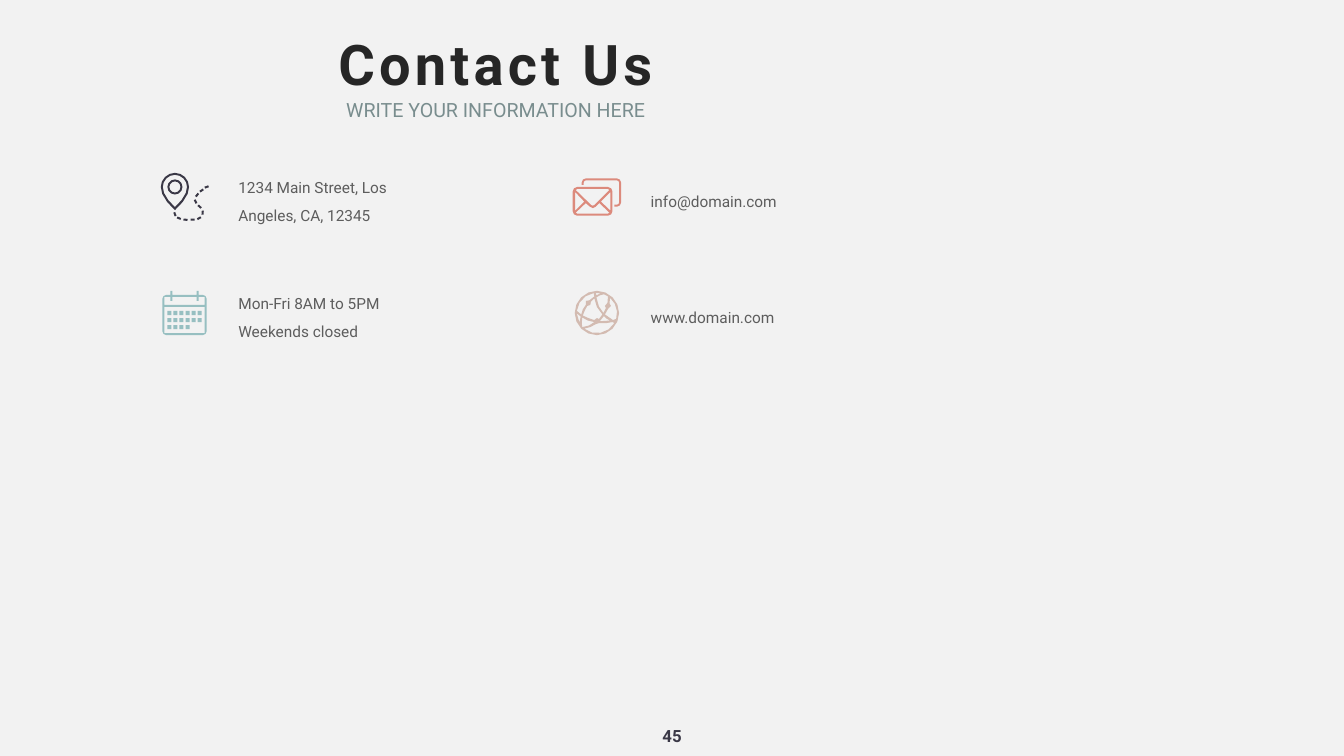
import math
from dataclasses import dataclass
from typing import Any

import pptx
import pptx.dml.color
import pptx.enum.text
import pptx.util
from pptx.dml.color import RGBColor
from pptx.enum.text import MSO_ANCHOR, MSO_AUTO_SIZE, PP_ALIGN
from pptx.util import Inches, Pt

FONT = "Roboto"
PAPER = RGBColor(0xF2, 0xF2, 0xF2)
INK = RGBColor(0x26, 0x26, 0x26)
SLATE = RGBColor(0x79, 0x8D, 0x8E)
GREY = RGBColor(0x5D, 0x5D, 0x5D)
NAVY = RGBColor(0x3A, 0x38, 0x46)
TEAL = RGBColor(0x97, 0xBF, 0xC1)
CORAL = RGBColor(0xDC, 0x8A, 0x7C)
SAND = RGBColor(0xD3, 0xBB, 0xB1)

Point = tuple[float, float]
Contour = list[Point]


@dataclass(frozen=True)
class Label:
    text: str
    left: float
    top: float
    width: float
    height: float
    font: dict[str, Any]
    frame: dict[str, Any]
    para: dict[str, Any]
    spacing: int = 0


@dataclass(frozen=True)
class Icon:
    color: RGBColor
    contours: list[Contour]


def assign(target: Any, values: dict[str, Any]) -> None:
    for name, value in values.items():
        setattr(target, name, value)


def arc(x: float, y: float, radius: float, start: float, end: float) -> Contour:
    step = 22.5 if radius > 0.2 else 30 if radius > 0.1 else 45
    steps = max(1, round(abs(end - start) / step))
    angles = [math.radians(start + (end - start) * i / steps) for i in range(steps + 1)]
    return [(x + radius * math.cos(a), y + radius * math.sin(a)) for a in angles]


def circle(x: float, y: float, radius: float) -> Contour:
    return arc(x, y, radius, 0, 360)[:-1]


def rectangle(x: float, y: float, width: float, height: float) -> Contour:
    return [(x, y), (x + width, y), (x + width, y + height), (x, y + height)]


def rounded(x: float, y: float, width: float, height: float, radius: float) -> Contour:
    inner = rectangle(x + radius, y + radius, width - 2 * radius, height - 2 * radius)
    return [point for i, corner in enumerate(inner)
            for point in arc(*corner, radius, 180 + 90 * i, 270 + 90 * i)]


def dash(x: float, y: float, angle: float) -> Contour:
    turn = math.radians(angle)
    cos, sin = math.cos(turn), math.sin(turn)
    return [(x + u * cos - v * sin, y + u * sin + v * cos)
            for u, v in rectangle(-0.04, -0.02, 0.08, 0.04)]


def teardrop(x: float, y: float, radius: float, tip: float) -> Contour:
    depth = tip - y
    side = [(0.9 * radius, 0.3 * depth), (0.55 * radius, 0.65 * depth)]
    return (arc(x, y, radius, 180, 360) + [(x + dx, y + dy) for dx, dy in side]
            + [(x, tip)] + [(x - dx, y + dy) for dx, dy in reversed(side)])


def pin_icon() -> Icon:
    dashes = [(4.1, 3.71, -20), (4, 3.78, -35), (3.91, 3.87, -52), (3.88, 4, 65),
              (3.96, 4.1, 42), (4.02, 4.22, 95), (3.95, 4.33, -30), (3.82, 4.36, 0),
              (3.68, 4.36, 5), (3.55, 4.33, 22), (3.47, 4.25, 70)]
    return Icon(NAVY, [
        teardrop(3.47, 3.71, 0.28, 4.17), teardrop(3.47, 3.71, 0.24, 4.11),
        circle(3.47, 3.71, 0.15), circle(3.47, 3.71, 0.11),
        *(dash(*place) for place in dashes)])


def calendar_icon() -> Icon:
    hooks = [rectangle(x, y, 0.04, 0.08) for x in (3.38, 3.9) for y in (5.77, 5.89)]
    days = [rectangle(3.32 + 0.12 * column, 6.17 + 0.14 * row, 0.08, 0.08)
            for row, count in enumerate((6, 6, 4)) for column in range(count)]
    return Icon(TEAL, [
        rounded(3.22, 5.85, 0.88, 0.8, 0.08), rectangle(3.26, 5.89, 0.8, 0.16),
        rectangle(3.26, 6.09, 0.8, 0.52), *hooks, *days])


def envelope_icon() -> Icon:
    card = [(11.58, 3.67), (11.54, 3.67), *arc(11.62, 3.62, 0.08, 180, 270),
            *arc(12.24, 3.62, 0.08, 270, 360), *arc(12.24, 4.02, 0.08, 0, 90),
            (12.19, 4.1), (12.19, 4.06), *arc(12.24, 4.02, 0.04, 90, 0),
            *arc(12.24, 3.62, 0.04, 360, 270), *arc(11.62, 3.62, 0.04, 270, 180)]
    flap = [(11.45, 3.75), (12.06, 3.75), (12.09, 3.77), (11.79, 4.07),
            (11.76, 4.08), (11.73, 4.07), (11.42, 3.77)]
    base = [(11.45, 4.24), (11.42, 4.22), (11.62, 4.03), (11.7, 4.1), (11.76, 4.13),
            (11.82, 4.1), (11.89, 4.03), (12.09, 4.22), (12.06, 4.24)]
    sides = [[(x, 3.81), (tip, 4), (x, 4.18)] for x, tip in ((11.41, 11.59), (12.11, 11.92))]
    return Icon(CORAL, [rounded(11.36, 3.71, 0.79, 0.57, 0.09), flap, base, *sides, card])


def globe_icon() -> Icon:
    x, y = 11.84, 6.21

    def rim(start: float, end: float) -> Contour:
        return arc(x, y, 0.4, start, end)

    east = rim(-49, 17) + [
        (12.16, 6.35), (12, 6.24), (12.06, 6.13), (12.12, 6.07), (12.09, 6.02)]
    south = rim(30, 129) + [(11.71, 6.49), (11.82, 6.43), (11.89, 6.41), (12.03, 6.41), (12.15, 6.39)]
    southwest = [(11.55, 6.49), (11.54, 6.41), (11.55, 6.3), (11.66, 6.36), (11.79, 6.39), (11.68, 6.46)]
    west = rim(148, 179) + [(11.52, 6.28), (11.5, 6.37)]
    northwest = rim(186, 261) + [
        (11.79, 5.88), (11.69, 5.96), (11.62, 5.97), (11.62, 6.05), (11.56, 6.14), (11.53, 6.24)]
    north = [(11.82, 5.81), (11.91, 5.82), (11.83, 5.86)]
    middle = [(11.95, 6.24), (11.88, 6.33), (11.84, 6.31), (11.79, 6.35), (11.67, 6.31), (11.56, 6.26),
              (11.6, 6.16), (11.65, 6.07), (11.71, 6.05), (11.72, 5.99), (11.79, 5.92), (11.84, 6.09)]
    wedge = [(11.98, 6.27), (12.03, 6.32), (12.1, 6.36), (11.96, 6.37), (11.9, 6.37)]
    northeast = [(12.06, 5.88), (12.05, 6.01), (12, 6.07), (12.02, 6.11), (11.97, 6.21),
                 (11.88, 6.08), (11.83, 5.9), (11.9, 5.86), (11.98, 5.84)]
    return Icon(SAND, [circle(x, y, 0.44), east, south, southwest, west,
                       northwest, north, middle, wedge, northeast])


def draw_icon(page: Any, icon: Icon) -> None:
    first, *others = [[(Inches(x), Inches(y)) for x, y in contour] for contour in icon.contours]
    builder = page.shapes.build_freeform(*first[0])
    builder.add_line_segments(first[1:], close=True)
    for contour in others:
        builder.move_to(*contour[0])
        builder.add_line_segments(contour[1:], close=True)
    shape = builder.convert_to_shape()
    shape.shadow.inherit = False
    shape.fill.solid()
    shape.fill.fore_color.rgb = icon.color
    shape.line.fill.background()


def write_label(box: Any, label: Label) -> None:
    assign(box, {name: Inches(getattr(label, name)) for name in ("left", "top", "width", "height")})
    assign(box.text_frame, {"auto_size": MSO_AUTO_SIZE.SHAPE_TO_FIT_TEXT, **label.frame})
    para = box.text_frame.paragraphs[0]
    assign(para, label.para)
    span = para.add_run()
    span.text = label.text
    assign(span.font, {"name": FONT, **{k: v for k, v in label.font.items() if k != "color"}})
    span.font.color.rgb = label.font["color"]
    if label.spacing:
        span.font._element.set("spc", str(label.spacing * 100))


def add_label(page: Any, label: Label) -> None:
    write_label(page.shapes.add_textbox(0, 0, 0, 0), label)


def contact(text: str, left: float, middle: float, lines: int) -> Label:
    height = 0.04 + 0.56 * lines
    return Label(text, left, middle - height / 2, 3.67, height,
                 {"size": Pt(22), "color": GREY},
                 {"word_wrap": True, "vertical_anchor": MSO_ANCHOR.MIDDLE,
                  "margin_top": Inches(0.03), "margin_bottom": Inches(0.03)},
                 {"line_spacing": Pt(40), "space_after": Pt(18)})


def main() -> None:
    deck = pptx.Presentation()
    deck.slide_width, deck.slide_height = Inches(26.66), Inches(15)
    page = deck.slides.add_slide(deck.slide_layouts[5])
    page.background.fill.solid()
    page.background.fill.fore_color.rgb = PAPER
    center = {"alignment": PP_ALIGN.CENTER}
    write_label(page.shapes.title, Label(
        "Contact Us", 6.52, 0.52, 6.62, 1.45, {"size": Pt(80), "bold": True, "color": INK},
        {"word_wrap": False, "vertical_anchor": MSO_ANCHOR.BOTTOM}, center, 6))
    add_label(page, Label(
        "WRITE YOUR INFORMATION HERE", 6.72, 1.83, 6.22, 0.62, {"size": Pt(28), "color": SLATE},
        {"word_wrap": False, "margin_top": Inches(0.03), "margin_bottom": Inches(0.03)},
        {**center, "line_spacing": Pt(40), "space_after": Pt(12)}))
    add_label(page, Label(
        "45", 13.02, 14.35, 0.62, 0.5, {"size": Pt(24), "bold": True, "color": NAVY},
        {"word_wrap": False, "vertical_anchor": MSO_ANCHOR.MIDDLE}, center))
    for text, left, middle, lines in (
            ("1234 Main Street, Los Angeles, CA, 12345", 4.63, 3.91, 2),
            ("info@domain.com", 12.81, 3.91, 1),
            ("www.domain.com", 12.81, 6.21, 1),
            ("Mon-Fri 8AM to 5PM Weekends closed", 4.63, 6.21, 2)):
        add_label(page, contact(text, left, middle, lines))
    for icon in (pin_icon(), calendar_icon(), envelope_icon(), globe_icon()):
        draw_icon(page, icon)
    deck.save("out.pptx")


if __name__ == "__main__":
    main()
